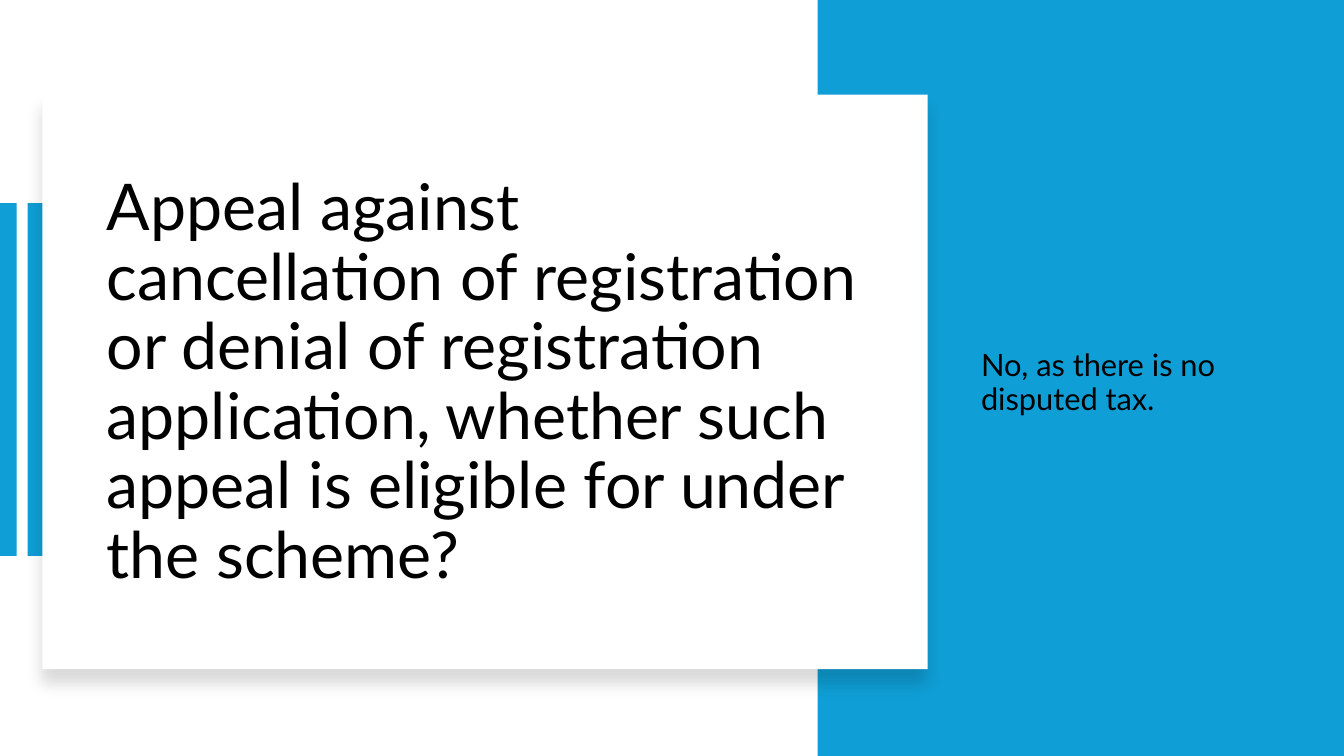
from dataclasses import dataclass

from lxml.etree import SubElement
from pptx import Presentation
from pptx.dml.color import RGBColor
from pptx.enum.shapes import MSO_SHAPE as Shape
from pptx.enum.text import MSO_ANCHOR as Anchor, MSO_AUTO_SIZE as AutoSize, PP_ALIGN as Align
from pptx.oxml.ns import qn
from pptx.util import Inches, Pt

BLUE = RGBColor(0x0F, 0x9E, 0xD5)
WHITE = RGBColor(0xFF, 0xFF, 0xFF)
BLACK = RGBColor(0x00, 0x00, 0x00)
FONT = "Lato"


@dataclass
class Box:
    left: float
    top: float
    width: float
    height: float

    def lengths(self) -> list:
        return [Inches(v) for v in (self.left, self.top, self.width, self.height)]


@dataclass
class Panel:
    box: Box
    color: RGBColor
    rotation: int = 0


@dataclass
class TextBlock:
    box: Box
    text: str
    size: int
    space_before: int = 0


INNER_BAR = Panel(Box(-1.39, 3.68, 3.5, 0.17), BLUE, 90)
OUTER_BAR = Panel(Box(-1.67, 3.68, 3.5, 0.17), BLUE, 90)
SIDE_PANEL = Panel(Box(6.97, 1.14, 7.5, 5.22), BLUE, 270)
CARD = Panel(Box(0.42, 0.94, 8.78, 5.7), WHITE)

QUESTION = TextBlock(
    Box(0.96, 1.61, 7.77, 4.39),
    "Appeal against cancellation of registration or denial of registration "
    "application, whether such appeal is eligible for under the scheme?",
    46,
)
ANSWER = TextBlock(Box(9.63, 2.02, 3.28, 3.57), "No, as there is no disputed tax.", 22, 10)


def add_panel(slide, panel: Panel):
    sp = slide.shapes.add_shape(Shape.RECTANGLE, *panel.box.lengths())
    sp.rotation = panel.rotation
    sp.fill.solid()
    sp.fill.fore_color.rgb = panel.color
    sp.line.fill.background()
    sp.shadow.inherit = False
    return sp


def add_drop_shadow(sp) -> None:
    effects = sp.element.spPr.find(qn("a:effectLst"))
    shadow = SubElement(effects, qn("a:outerShdw"), blurRad=str(Pt(11)), dist=str(Pt(10)),
                        dir="5400000", algn="t", rotWithShape="0")
    color = SubElement(shadow, qn("a:srgbClr"), val=str(BLACK))
    SubElement(color, qn("a:alpha"), val="15000")


def fill_placeholder(slide, sp, block: TextBlock) -> None:
    slide.shapes.element.append(sp.element)
    sp.left, sp.top, sp.width, sp.height = block.box.lengths()
    tf = sp.text_frame
    tf.text = block.text
    tf.word_wrap = True
    tf.auto_size = AutoSize.NONE
    tf.vertical_anchor = Anchor.MIDDLE
    p = tf.paragraphs[0]
    p.alignment = Align.LEFT
    p.line_spacing = 0.9
    p.space_before = Pt(block.space_before)
    props = p._p.get_or_add_pPr()
    props.set("marL", "0")
    props.set("indent", "0")
    SubElement(props, qn("a:buNone"))
    font = p.runs[0].font
    font.name = FONT
    font.size = Pt(block.size)
    font.color.rgb = BLACK


def main() -> None:
    prs = Presentation()
    prs.slide_width, prs.slide_height = Inches(13.33), Inches(7.5)
    slide = prs.slides.add_slide(prs.slide_layouts[1])
    for panel in (INNER_BAR, SIDE_PANEL):
        add_panel(slide, panel)
    add_drop_shadow(add_panel(slide, CARD))
    fill_placeholder(slide, slide.shapes.title, QUESTION)
    fill_placeholder(slide, slide.placeholders[1], ANSWER)
    add_panel(slide, OUTER_BAR)
    prs.save("out.pptx")


if __name__ == "__main__":
    main()
